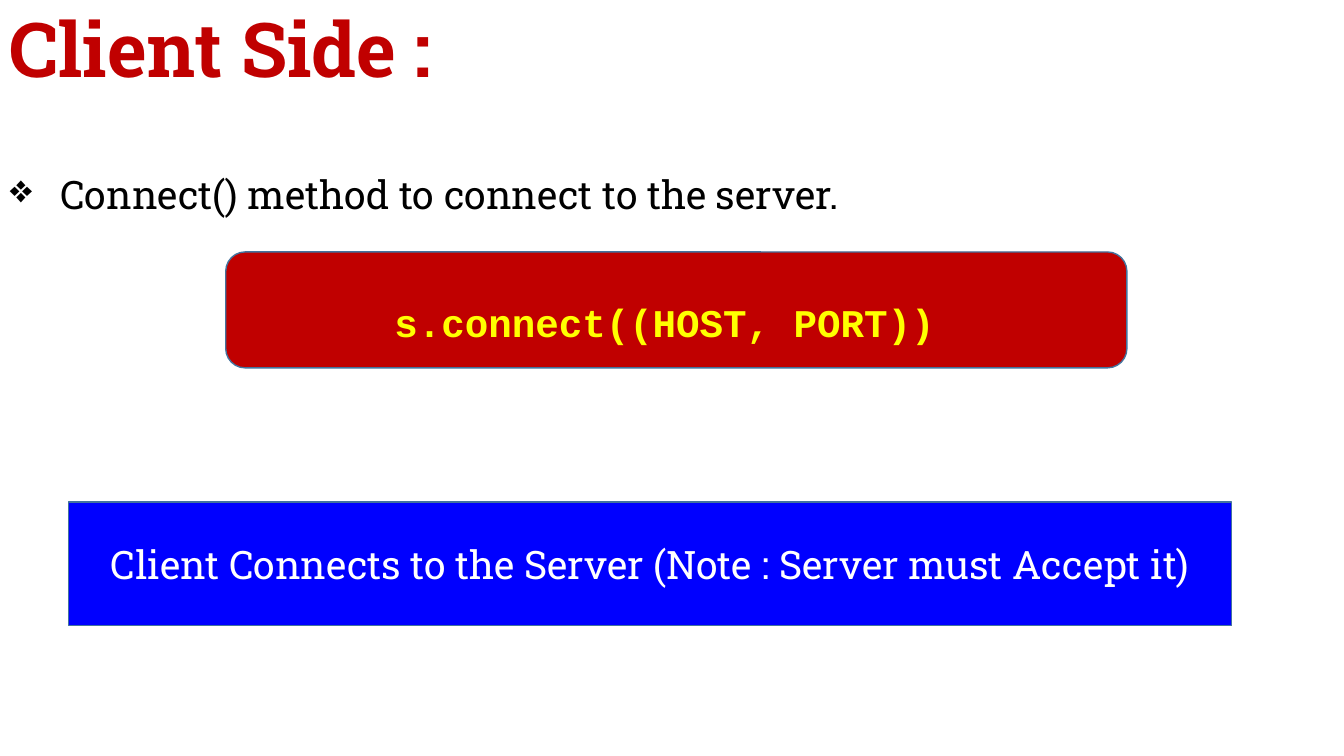
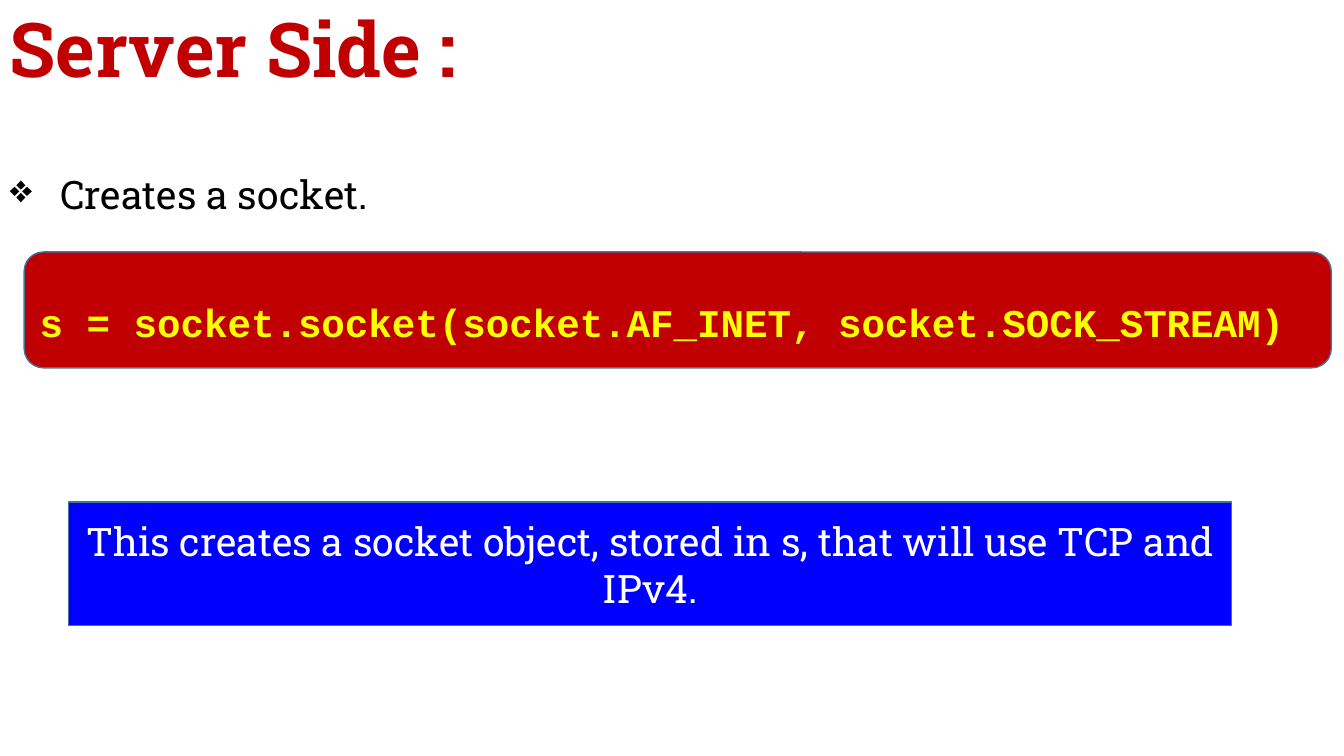
from dataclasses import dataclass

from lxml.etree import SubElement
from pptx import Presentation
from pptx.dml.color import RGBColor
from pptx.enum.shapes import MSO_SHAPE as Preset
from pptx.enum.text import MSO_ANCHOR as Anchor, MSO_AUTO_SIZE as AutoSize, PP_ALIGN as Align
from pptx.oxml.ns import qn
from pptx.util import Cm, Pt


@dataclass(frozen=True)
class Theme:
    red: RGBColor = RGBColor(0xC0, 0x00, 0x00)
    blue: RGBColor = RGBColor(0x00, 0x00, 0xFF)
    yellow: RGBColor = RGBColor(0xFF, 0xFF, 0x00)
    white: RGBColor = RGBColor(0xFF, 0xFF, 0xFF)
    black: RGBColor = RGBColor(0x00, 0x00, 0x00)
    outline: RGBColor = RGBColor(0x43, 0x73, 0x9E)
    text_font: str = "Roboto Slab"
    code_font: str = "Courier New"
    title_size: Pt = Pt(54)
    body_size: Pt = Pt(28)


THEME = Theme()
SLIDE_WIDTH, SLIDE_HEIGHT = Cm(33.87), Cm(19.05)

# Boxes are left, top, width, height.
TITLE_BOX = (Cm(0), Cm(0), Cm(30.48), Cm(2.67))
BULLET_BOX = (Cm(0), Cm(2.97), SLIDE_WIDTH, Cm(2.29))
NOTE_BOX = (Cm(1.73), Cm(12.65), Cm(29.31), Cm(3.12))


def code_box(left, width):
    return left, Cm(6.35), width, Cm(2.92)


def write(shape, text, color, size=THEME.body_size, name=THEME.text_font,
          bold=False, align=Align.LEFT, spacing=1.0, anchor=Anchor.MIDDLE):
    """Fill the shape with one styled paragraph and return that paragraph."""
    frame = shape.text_frame
    frame.word_wrap = True
    frame.vertical_anchor = anchor
    paragraph = frame.paragraphs[0]
    paragraph.text = text
    paragraph.alignment = align
    paragraph.line_spacing = spacing
    font = paragraph.font
    font.name, font.size, font.bold = name, size, bold
    font.color.rgb = color
    return paragraph


def add_bullet_mark(paragraph, mark, indent):
    properties = paragraph._p.get_or_add_pPr()
    properties.set("marL", str(indent))
    properties.set("indent", str(-indent))
    bullet = SubElement(properties, qn("a:buChar"))
    bullet.set("char", mark)
    properties.find(qn("a:lnSpc")).addnext(bullet)


def add_panel(slide, preset, box, fill):
    panel = slide.shapes.add_shape(preset, *box)
    panel.shadow.inherit = False
    panel.fill.solid()
    panel.fill.fore_color.rgb = fill
    panel.line.color.rgb = THEME.outline
    panel.line.width = Pt(1)
    return panel


def add_title(slide, box, text):
    write(slide.shapes.add_textbox(*box), text, THEME.red,
          size=THEME.title_size, bold=True, spacing=0.9)


def add_bullet(slide, box, text):
    shape = slide.shapes.add_textbox(*box)
    paragraph = write(shape, text, THEME.black, align=Align.JUSTIFY,
                      spacing=2.0, anchor=Anchor.TOP)
    add_bullet_mark(paragraph, "❖", Cm(1.27))
    shape.text_frame.auto_size = AutoSize.SHAPE_TO_FIT_TEXT


def add_code(slide, box, text, align):
    write(add_panel(slide, Preset.ROUNDED_RECTANGLE, box, THEME.red), text,
          THEME.yellow, name=THEME.code_font, bold=True, align=align, spacing=1.5)


def add_note(slide, box, text):
    write(add_panel(slide, Preset.RECTANGLE, box, THEME.blue), text,
          THEME.white, align=Align.CENTER)


def add_method_slide(presentation, title, bullet, code, code_place, code_align, note):
    slide = presentation.slides.add_slide(presentation.slide_layouts[6])
    add_bullet(slide, BULLET_BOX, bullet)
    add_title(slide, TITLE_BOX, title)
    add_code(slide, code_place, code, code_align)
    add_note(slide, NOTE_BOX, note)


def main():
    presentation = Presentation()
    presentation.slide_width = SLIDE_WIDTH
    presentation.slide_height = SLIDE_HEIGHT
    add_method_slide(
        presentation,
        title="Client Side :",
        bullet="Connect() method to connect to the server.",
        code="s.connect((HOST, PORT)) ",
        code_place=code_box(Cm(5.69), Cm(22.71)),
        code_align=Align.CENTER,
        note="Client Connects to the Server (Note : Server must Accept it)",
    )
    add_method_slide(
        presentation,
        title="Server Side :",
        bullet="Creates a socket.",
        code="s = socket.socket(socket.AF_INET, socket.SOCK_STREAM)",
        code_place=code_box(Cm(0.61), Cm(32.94)),
        code_align=Align.LEFT,
        note="This creates a socket object, stored in s, that will use TCP and IPv4.",
    )
    presentation.save("out.pptx")


if __name__ == "__main__":
    main()
